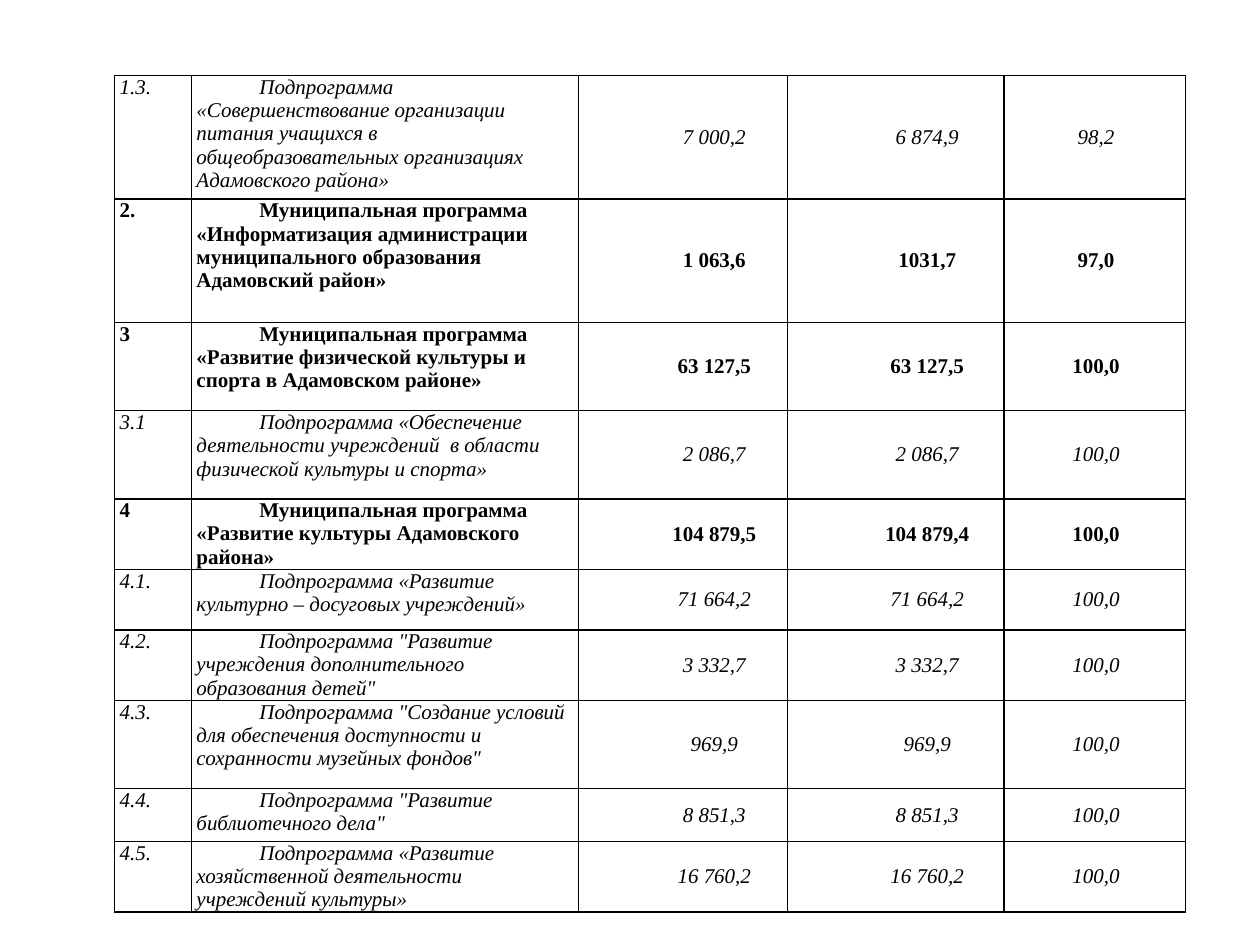
import pptx
import pptx.dml.color
import pptx.enum.text
import pptx.oxml
import pptx.oxml.ns
import pptx.util

Inches = pptx.util.Inches
Pt = pptx.util.Pt
Align = pptx.enum.text.PP_ALIGN
Anchor = pptx.enum.text.MSO_ANCHOR

BLACK = pptx.dml.color.RGBColor(0x00, 0x00, 0x00)
BLANK_LAYOUT = 6

# Width, alignment, vertical anchor and first-line indent of each column
COLUMNS = [
    (0.61, Align.LEFT, Anchor.TOP, 0),
    (3.07, Align.LEFT, Anchor.TOP, 0.5),
    (1.66, Align.CENTER, Anchor.MIDDLE, 0.5),
    (1.72, Align.CENTER, Anchor.MIDDLE, 0.5),
    (1.44, Align.CENTER, Anchor.MIDDLE, 0.02),
]

# Row height, then number, name, plan, actual, percent
PROGRAMMES = [
    (0.98, "1.3.", "Подпрограмма «Совершенствование организации питания учащихся в "
     "общеобразовательных организациях Адамовского района»", "7 000,2", "6 874,9", "98,2"),
    (0.98, "2.", "Муниципальная программа «Информатизация администрации "
     "муниципального образования Адамовский район»", "1 063,6", "1031,7", "97,0"),
    (0.7, "3", "Муниципальная программа «Развитие физической культуры и спорта "
     "в Адамовском районе»", "63 127,5", "63 127,5", "100,0"),
    (0.7, "3.1", "Подпрограмма «Обеспечение деятельности учреждений  в области "
     "физической культуры и спорта»", "2 086,7", "2 086,7", "100,0"),
    (0.56, "4", "Муниципальная программа «Развитие культуры Адамовского района»",
     "104 879,5", "104 879,4", "100,0"),
    (0.48, "4.1.", "Подпрограмма «Развитие культурно – досуговых учреждений»",
     "71 664,2", "71 664,2", "100,0"),
    (0.56, "4.2.", 'Подпрограмма "Развитие учреждения дополнительного образования детей"',
     "3 332,7", "3 332,7", "100,0"),
    (0.7, "4.3.", 'Подпрограмма "Создание условий для обеспечения доступности и '
     'сохранности музейных фондов"', "969,9", "969,9", "100,0"),
    (0.42, "4.4.", 'Подпрограмма "Развитие библиотечного дела"',
     "8 851,3", "8 851,3", "100,0"),
    (0.56, "4.5.", "Подпрограмма «Развитие хозяйственной деятельности учреждений культуры»",
     "16 760,2", "16 760,2", "100,0"),
]


class SlideBuilder:
    """Holds the text and border style and the slide being filled."""

    font_name = "Times New Roman"
    font_size = Pt(12)
    border_width = Pt(1)
    color = BLACK

    def __init__(self, deck):
        self.page = deck.slides.add_slide(deck.slide_layouts[BLANK_LAYOUT])

    def add_programme_table(self, left, top, programmes):
        width = sum(column[0] for column in COLUMNS)
        height = sum(programme[0] for programme in programmes)
        frame = self.page.shapes.add_table(
            len(programmes), len(COLUMNS),
            Inches(left), Inches(top), Inches(width), Inches(height))
        table = frame.table
        table.first_row = False
        table.horz_banding = False
        for column, settings in zip(table.columns, COLUMNS):
            column.width = Inches(settings[0])
        for row, (row_height, *texts) in zip(table.rows, programmes):
            row.height = Inches(row_height)
            is_main = texts[1].startswith("Муниципальная")
            for cell, text, settings in zip(row.cells, texts, COLUMNS):
                self.format_cell(cell, text, settings, is_main)

    def format_cell(self, cell, text, settings, is_main):
        """Main programmes are bold, subprogrammes italic."""
        _, alignment, anchor, indent = settings
        cell.margin_left = cell.margin_right = Inches(0.04)
        cell.margin_top = cell.margin_bottom = 0
        cell.vertical_anchor = anchor
        self.add_borders(cell)
        cell.fill.background()
        cell.text_frame.text = text
        para = cell.text_frame.paragraphs[0]
        para.alignment = alignment
        properties = para._p.get_or_add_pPr()
        properties.set("marL", "0")
        properties.set("indent", str(Inches(indent)))
        for span in para.runs:
            span.font.name = self.font_name
            span.font.size = self.font_size
            span.font.bold = is_main
            span.font.italic = not is_main
            span.font.color.rgb = self.color

    def add_borders(self, cell):
        properties = cell._tc.get_or_add_tcPr()
        for side in ("lnL", "lnR", "lnT", "lnB"):
            properties.append(pptx.oxml.parse_xml(
                f'<a:{side} {pptx.oxml.ns.nsdecls("a")} w="{self.border_width}">'
                f'<a:solidFill><a:srgbClr val="{self.color}"/></a:solidFill>'
                f'</a:{side}>'))


def main():
    deck = pptx.Presentation()
    deck.slide_width = Inches(10)
    deck.slide_height = Inches(7.5)
    builder = SlideBuilder(deck)
    builder.add_programme_table(0.91, 0.6, PROGRAMMES)
    deck.save("out.pptx")


if __name__ == "__main__":
    main()
